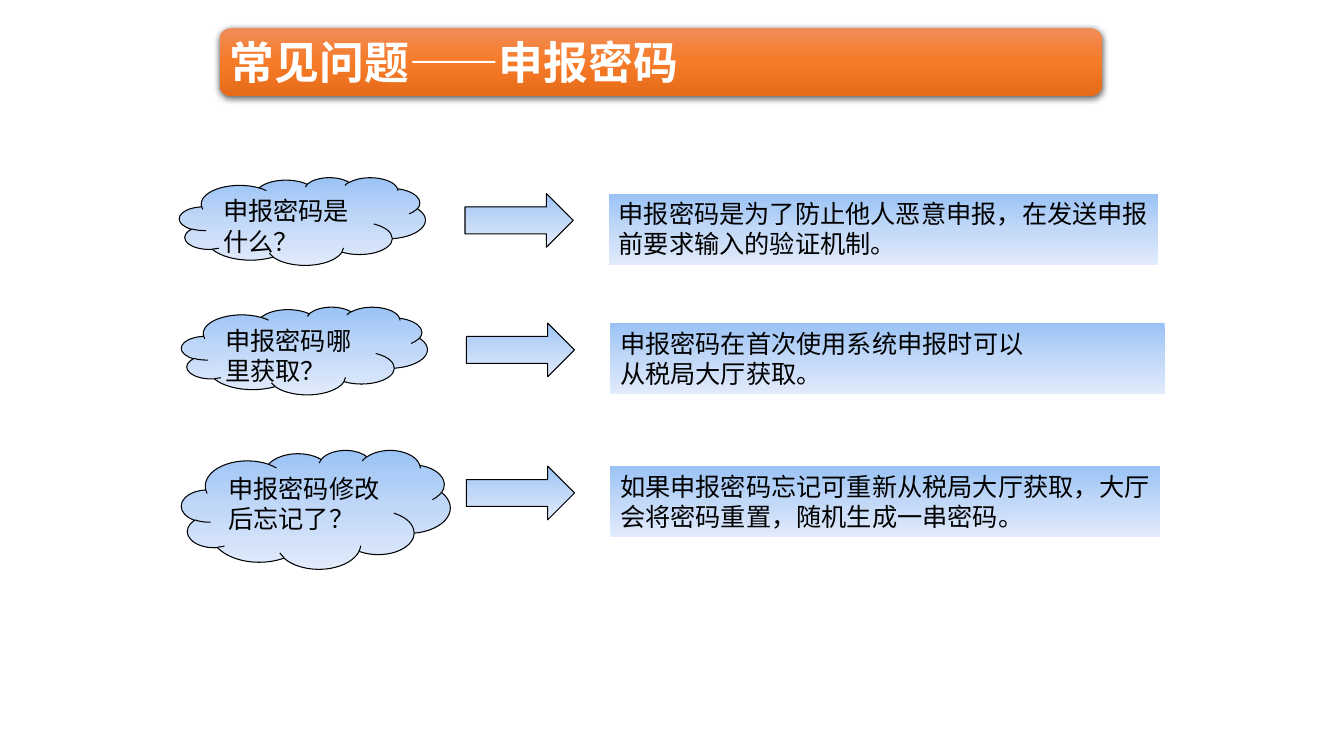
"""Build the slide of common questions about the filing password."""
from copy import deepcopy
from dataclasses import dataclass

from lxml.etree import SubElement
from pptx import Presentation
from pptx.dml.color import RGBColor
from pptx.enum.shapes import MSO_SHAPE as Preset
from pptx.enum.text import MSO_ANCHOR as Anchor, MSO_AUTO_SIZE as AutoSize, PP_ALIGN as Align
from pptx.oxml.ns import qn
from pptx.shapes.autoshape import Shape
from pptx.util import Inches, Pt

BLACK = RGBColor(0x00, 0x00, 0x00)
WHITE = RGBColor(0xFF, 0xFF, 0xFF)
ORANGES = (RGBColor(0xF1, 0x8C, 0x57), RGBColor(0xF6, 0x7B, 0x28), RGBColor(0xE5, 0x6C, 0x19))
BLUES = (RGBColor(0x9A, 0xC3, 0xF5), RGBColor(0xC2, 0xD8, 0xF8), RGBColor(0xE1, 0xEB, 0xFB))
CHINESE_FONT = "Noto Sans CJK SC"
WIDTH, HEIGHT = Inches(13.33), Inches(7.5)
ARROW_DROP = 2.13


@dataclass(frozen=True)
class Box:
    """A frame in percent of the slide's width and height."""
    left: float
    top: float
    width: float
    height: float

    def lengths(self) -> tuple[int, int, int, int]:
        """Return left, top, width and height in EMU."""
        return (round(WIDTH * self.left / 100), round(HEIGHT * self.top / 100),
                round(WIDTH * self.width / 100), round(HEIGHT * self.height / 100))


@dataclass(frozen=True)
class Question:
    """A question cloud with its answer."""
    question: str
    answer: str
    cloud: Box
    shift: float = 0.1
    answer_width: float = 40.9
    wrap: bool = False


BANNER = Box(16.35, 3.73, 65.63, 8.93)
QUESTIONS = (
    Question("申报密码是什么？",
             "申报密码是为了防止他人恶意申报，在发送申报\n前要求输入的验证机制。",
             Box(13.35, 23.47, 18.3, 11.6), shift=0),
    Question("申报密码哪里获取？",
             "申报密码在首次使用系统申报时可以\n从税局大厅获取。",
             Box(13.5, 40.6, 18.3, 11.6), answer_width=41.25, wrap=True),
    Question("申报密码修改后忘记了？",
             "如果申报密码忘记可重新从税局大厅获取，大厅\n会将密码重置，随机生成一串密码。",
             Box(13.5, 59.53, 20, 15.73)),
)


def write(shape: Shape, text: str, *, font: str, size: float = 18, color: RGBColor = BLACK,
          bold: bool = False, anchor: Anchor = Anchor.TOP, wrap: bool = True) -> None:
    """Write left-aligned text, one paragraph a line."""
    frame = shape.text_frame
    frame.text = text
    frame.word_wrap = wrap
    frame.auto_size = AutoSize.NONE
    frame.vertical_anchor = anchor
    for paragraph in frame.paragraphs:
        paragraph.alignment = Align.LEFT
        paragraph.line_spacing = 1.0
        for run in paragraph.runs:
            run.font.name = font
            run.font.size = Pt(size)
            run.font.bold = bold
            run.font.color.rgb = color
            latin = run.font._element.find(qn("a:latin"))
            east_asian = deepcopy(latin)
            east_asian.tag = qn("a:ea")
            east_asian.set("typeface", CHINESE_FONT)
            latin.addnext(east_asian)


def add_gradient_shape(shapes, preset: Preset, box: Box, colors: tuple[RGBColor, ...],
                       outlined: bool = True) -> Shape:
    """Add a preset shape with a three-colour gradient from top to bottom."""
    shape = shapes.add_shape(preset, *box.lengths())
    shape.shadow.inherit = False
    shape.fill.gradient()
    shape.fill.gradient_angle = 270
    stops = shape.element.spPr.find(".//" + qn("a:gsLst"))
    stops.append(deepcopy(stops[0]))
    for stop, color, position in zip(shape.fill.gradient_stops, colors, (0, 0.5, 1)):
        stop.color.rgb = color
        stop.position = position
    if outlined:
        shape.line.color.rgb = BLACK
        shape.line.width = Pt(0.75)
    else:
        shape.line.fill.background()
    return shape


def add_drop_shadow(shape: Shape) -> None:
    """Add a soft black shadow below a shape."""
    effects = shape.element.spPr.find(qn("a:effectLst"))
    shadow = SubElement(effects, qn("a:outerShdw"), blurRad=str(Pt(4.5)), dist=str(Pt(1.5)),
                        dir="5400000", rotWithShape="0")
    color = SubElement(shadow, qn("a:srgbClr"), val=str(BLACK))
    SubElement(color, qn("a:alpha"), val="63000")


def add_title(shapes) -> None:
    """Place the title on its orange banner."""
    title = shapes.title
    title.left, title.top, title.width, title.height = BANNER.lengths()
    write(title, "常见问题——申报密码", font=CHINESE_FONT, size=32, color=WHITE, bold=True,
          anchor=Anchor.MIDDLE)
    banner = add_gradient_shape(shapes, Preset.ROUNDED_RECTANGLE, BANNER, ORANGES, outlined=False)
    add_drop_shadow(banner)
    title.element.addprevious(banner.element)


def add_question(shapes, item: Question) -> None:
    """Draw a question cloud, its arrow and its answer."""
    top = item.cloud.top + ARROW_DROP
    cloud = add_gradient_shape(shapes, Preset.CLOUD, item.cloud, BLUES)
    write(cloud, item.question, font="Times New Roman")
    add_gradient_shape(shapes, Preset.RIGHT_ARROW, Box(34.6 + item.shift, top, 8.05, 7.1), BLUES)
    answer_box = Box(45.3 + item.shift, top, item.answer_width, 9.45)
    answer = add_gradient_shape(shapes, Preset.RECTANGLE, answer_box, BLUES, outlined=False)
    write(answer, item.answer, font="Calibri", wrap=item.wrap)


def main() -> None:
    """Build and save the presentation."""
    presentation = Presentation()
    presentation.slide_width, presentation.slide_height = WIDTH, HEIGHT
    slide = presentation.slides.add_slide(presentation.slide_layouts[5])
    add_title(slide.shapes)
    for item in QUESTIONS:
        add_question(slide.shapes, item)
    presentation.save("out.pptx")


if __name__ == "__main__":
    main()
